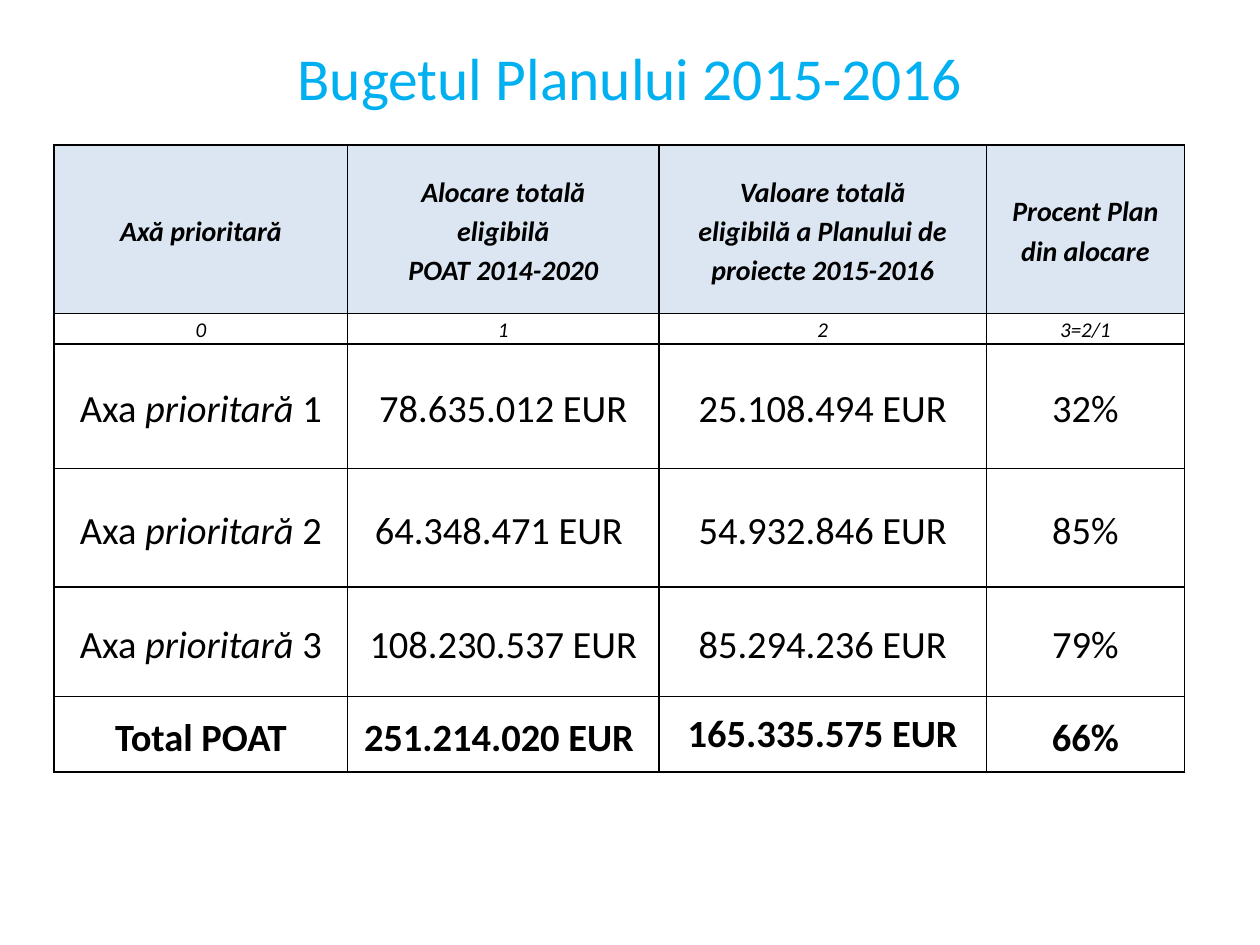
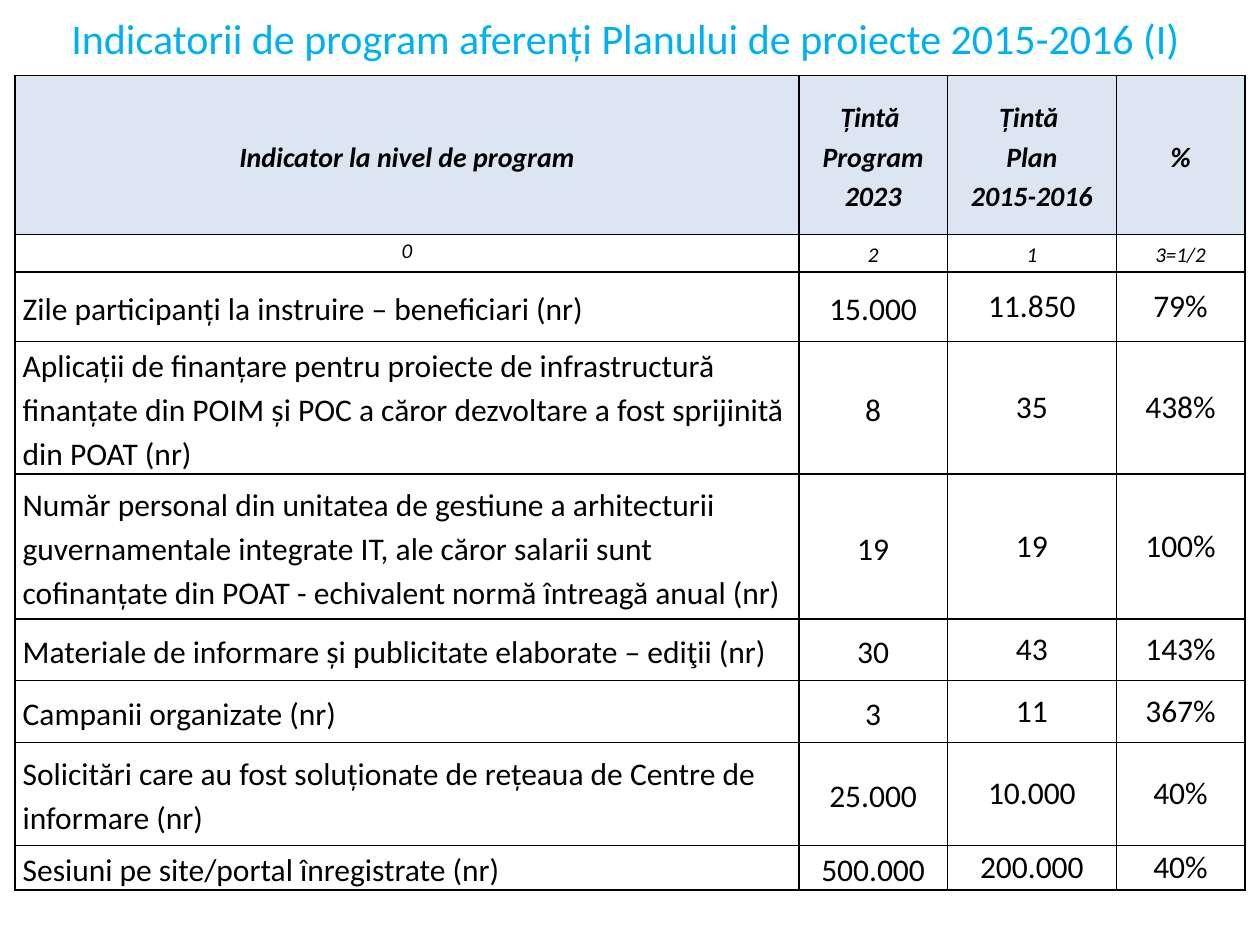
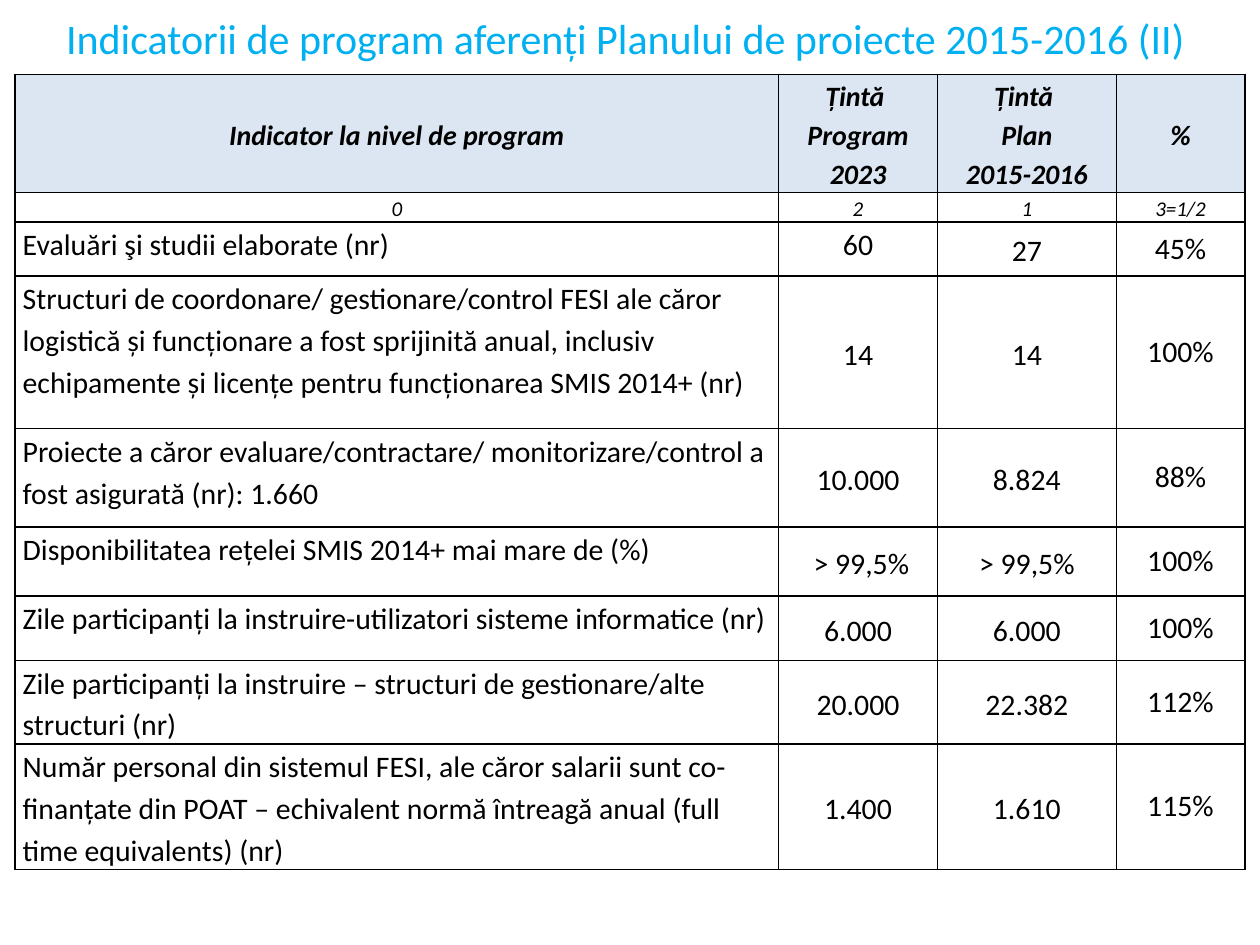
from lxml import etree
from pptx import Presentation
from pptx import util as u
from pptx.dml.color import RGBColor
from pptx.enum import text
from pptx.oxml.ns import qn

COLORS = {"title": "00B0F0", "ink": "000000", "header": "DCE6F2"}
FONT = "Calibri"
TOP, MIDDLE = text.MSO_ANCHOR.TOP, text.MSO_ANCHOR.MIDDLE
LEFT, CENTER = text.PP_ALIGN.LEFT, text.PP_ALIGN.CENTER
SPACED = 1.15

INDICATOR_HEAD = [
    ("Indicator la nivel de program", "Țintă \nProgram\n2023", "Țintă \nPlan\n2015-2016", "%"),
    ("0", "2", "1", "3=1/2"),
]
INDICATOR_TITLE = "Indicatorii de program aferenți Planului de proiecte 2015-2016 ({})"
INDICATOR_TITLE_BOX = (0.12, 0, 9.69, 0.6)

# Text between asterisks is italic. "tight" columns have no cell margins in the body;
# "single" and "top" list the (row, column) cells with single spacing or top anchor.
SLIDES = [
    {
        "title": "Bugetul Planului 2015-2016", "title_size": 34, "title_box": (0.5, 0.21, 9, 0.79),
        "corner": (0.43, 1.15), "cols": [2.33, 2.47, 2.6, 1.57],
        "heights": [1.34, 0.24, 0.99, 0.94, 0.87, 0.6],
        "size": 22, "margin": 0.07, "first_align": CENTER, "total": True,
        "tight": {2}, "single": {(5, 2)}, "top": set(), "space_after": {(5, 3): 10},
        "rows": [
            ("Axă prioritară", "Alocare totală\neligibilă\nPOAT 2014-2020",
             "Valoare totală\neligibilă a Planului de\nproiecte 2015-2016", "Procent Plan\ndin alocare"),
            ("0", "1", "2", "3=2/1"),
            ("Axa *prioritară *1", "78.635.012 EUR", "25.108.494 EUR", "32%"),
            ("Axa *prioritară *2", "64.348.471 EUR ", "54.932.846 EUR", "85%"),
            ("Axa *prioritară *3", "108.230.537 EUR", "85.294.236 EUR", "79%"),
            ("Total POAT", "251.214.020 EUR ", "165.335.575 EUR", "66%"),
        ],
    },
    {
        "title": INDICATOR_TITLE.format("I"), "title_size": 24, "title_box": INDICATOR_TITLE_BOX,
        "corner": (0.12, 0.6), "cols": [6.22, 1.18, 1.34, 1.02],
        "heights": [1.26, 0.3, 0.55, 0.82, 1.15, 0.49, 0.49, 0.82, 0.3],
        "size": 18, "margin": 0.06, "first_align": LEFT, "total": False,
        "tight": {2, 3}, "single": {(r, c) for r in range(2, 9) for c in (2, 3)},
        "top": {(1, 0)}, "space_after": {},
        "rows": INDICATOR_HEAD + [
            ("Zile participanți la instruire – beneficiari (nr)", "15.000", "11.850", "79%"),
            ("Aplicații de finanțare pentru proiecte de infrastructură finanțate din POIM și POC "
             "a căror dezvoltare a fost sprijinită din POAT (nr)", "8", "35", "438%"),
            ("Număr personal din unitatea de gestiune a arhitecturii guvernamentale integrate IT, "
             "ale căror salarii sunt cofinanțate din POAT - echivalent normă întreagă anual (nr)",
             "19", "19", "100%"),
            ("Materiale de informare și publicitate elaborate – ediţii (nr)", "30", "43", "143%"),
            ("Campanii organizate (nr)", "3", "11", "367%"),
            ("Solicitări care au fost soluționate de rețeaua de Centre de informare (nr)",
             "25.000", "10.000", "40%"),
            ("Sesiuni pe site/portal înregistrate (nr)", "500.000", "200.000", "40%"),
        ],
    },
    {
        "title": INDICATOR_TITLE.format("II"), "title_size": 24, "title_box": INDICATOR_TITLE_BOX,
        "corner": (0.12, 0.59), "cols": [6.06, 1.26, 1.42, 1.02],
        "heights": [0.63, 0.2, 0.43, 1.21, 0.78, 0.55, 0.51, 0.39, 0.58],
        "size": 17, "margin": 0.06, "first_align": LEFT, "total": False,
        "tight": {2, 3}, "single": {(r, 3) for r in range(2, 9)},
        "top": {(r, 0) for r in range(1, 9)} | {(2, 1)}, "space_after": {},
        "rows": INDICATOR_HEAD + [
            ("Evaluări şi studii elaborate (nr)", "60", "27", "45%"),
            ("Structuri de coordonare/ gestionare/control FESI ale căror logistică și funcționare "
             "a fost sprijinită anual, inclusiv echipamente și licențe pentru funcționarea "
             "SMIS 2014+ (nr)", "14", "14", "100%"),
            ("Proiecte a căror evaluare/contractare/ monitorizare/control a fost asigurată "
             "(nr): 1.660", "10.000", "8.824", "88%"),
            ("Disponibilitatea rețelei SMIS 2014+ mai mare de (%)", " > 99,5%", "> 99,5%", "100%"),
            ("Zile participanți la instruire-utilizatori sisteme informatice (nr)",
             "6.000", "6.000", "100%"),
            ("Zile participanți la instruire – structuri de gestionare/alte structuri (nr)",
             "20.000", "22.382", "112%"),
            ("Număr personal din sistemul FESI, ale căror salarii sunt co-finanțate din POAT – "
             "echivalent normă întreagă anual (full time equivalents) (nr)",
             "1.400", "1.610", "115%"),
        ],
    },
]


def set_all(target, values):
    for name, value in values.items():
        setattr(target, name, value)


def add_run(paragraph, words, size, color, bold=False, italic=False):
    run = paragraph.add_run()
    run.text = words
    set_all(run.font, {"name": FONT, "size": u.Pt(size), "bold": bold, "italic": italic})
    run.font.color.rgb = RGBColor.from_string(COLORS[color])


def add_borders(cell):
    properties = cell._tc.get_or_add_tcPr()
    for position, side in enumerate(("lnL", "lnR", "lnT", "lnB")):
        line = etree.Element(qn("a:" + side), w=str(u.Pt(1)))
        fill = etree.SubElement(line, qn("a:solidFill"))
        etree.SubElement(fill, qn("a:srgbClr"), val=COLORS["ink"])
        properties.insert(position, line)


def add_title(slide, content):
    title = slide.shapes.title
    box = map(u.Inches, content["title_box"])
    set_all(title, dict(zip(("left", "top", "width", "height"), box)))
    set_all(title.text_frame, {"vertical_anchor": MIDDLE, "word_wrap": True,
                               "auto_size": text.MSO_AUTO_SIZE.NONE})
    heading = title.text_frame.paragraphs[0]
    heading.alignment = CENTER
    add_run(heading, content["title"], content["title_size"], "title")


def fill_cell(cell, words, r, c, content):
    header, body = r == 0, r > 1
    margin = u.Inches(0 if body and c in content["tight"] else content["margin"])
    set_all(cell, {"margin_left": margin, "margin_right": margin,
                   "margin_top": 0, "margin_bottom": 0,
                   "vertical_anchor": TOP if (r, c) in content["top"] else MIDDLE})
    if header:
        cell.fill.solid()
        cell.fill.fore_color.rgb = RGBColor.from_string(COLORS["header"])
    else:
        cell.fill.background()
    add_borders(cell)

    size = content["size"] if body else (16, 12)[r]
    bold = header or (content["total"] and r == len(content["rows"]) - 1)
    for i, line in enumerate(words.split("\n")):
        paragraph = cell.text_frame.add_paragraph() if i else cell.text_frame.paragraphs[0]
        paragraph.alignment = content["first_align"] if body and c == 0 else CENTER
        if (r, c) not in content["single"]:
            paragraph.line_spacing = SPACED
        if (r, c) in content["space_after"]:
            paragraph.space_after = u.Pt(content["space_after"][r, c])
        for part, piece in enumerate(line.split("*")):
            add_run(paragraph, piece, size, "ink", bold, italic=not body or part % 2 == 1)


def add_grid(slide, content):
    rows, cols, heights = content["rows"], content["cols"], content["heights"]
    left, top = content["corner"]
    frame = slide.shapes.add_table(len(rows), len(cols), u.Inches(left), u.Inches(top),
                                   u.Inches(sum(cols)), u.Inches(sum(heights)))
    grid = frame.table
    set_all(grid, {"first_row": False, "horz_banding": False})
    for column, width in zip(grid.columns, cols):
        column.width = u.Inches(width)
    for row, height in zip(grid.rows, heights):
        row.height = u.Inches(height)
    for r, row in enumerate(rows):
        for c, words in enumerate(row):
            fill_cell(grid.cell(r, c), words, r, c, content)


def main():
    deck = Presentation()
    set_all(deck, {"slide_width": u.Inches(10), "slide_height": u.Inches(7.5)})
    title_only = deck.slide_layouts.get_by_name("Title Only")
    for content in SLIDES:
        slide = deck.slides.add_slide(title_only)
        add_title(slide, content)
        add_grid(slide, content)
    deck.save("out.pptx")


if __name__ == "__main__":
    main()
